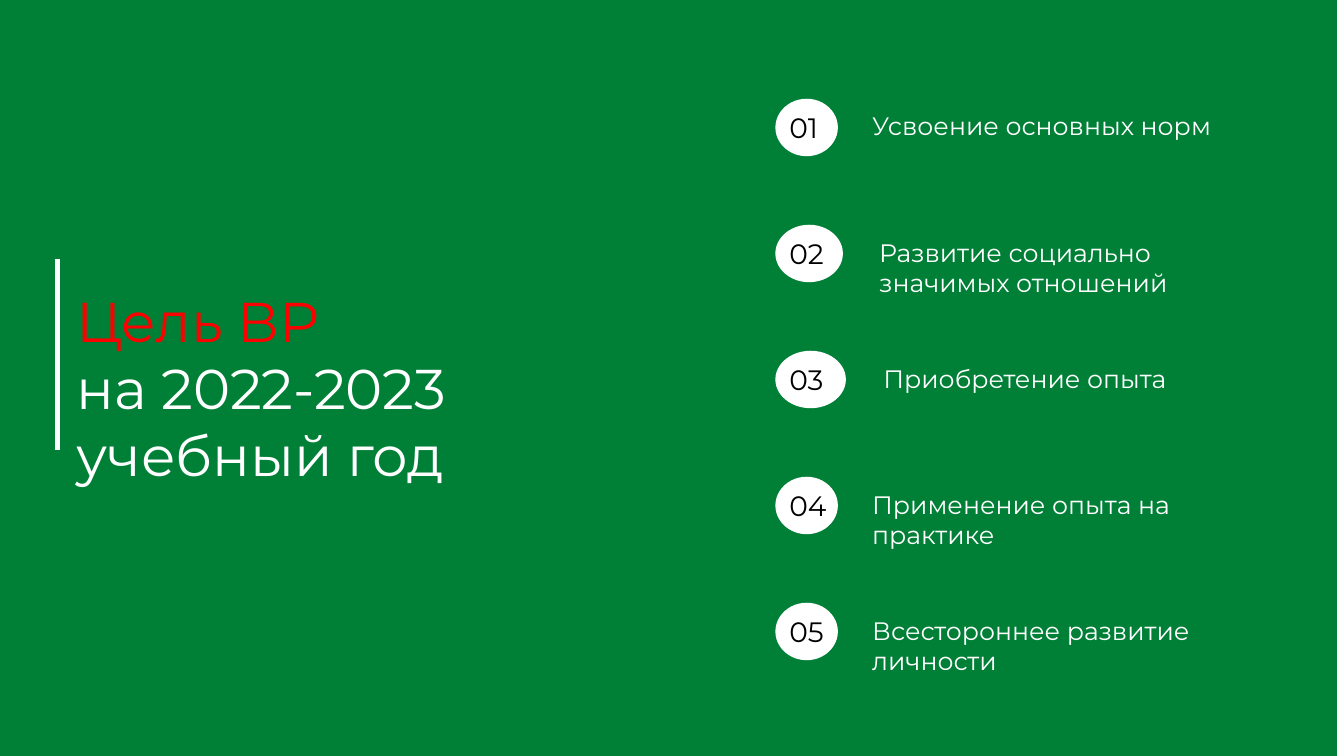
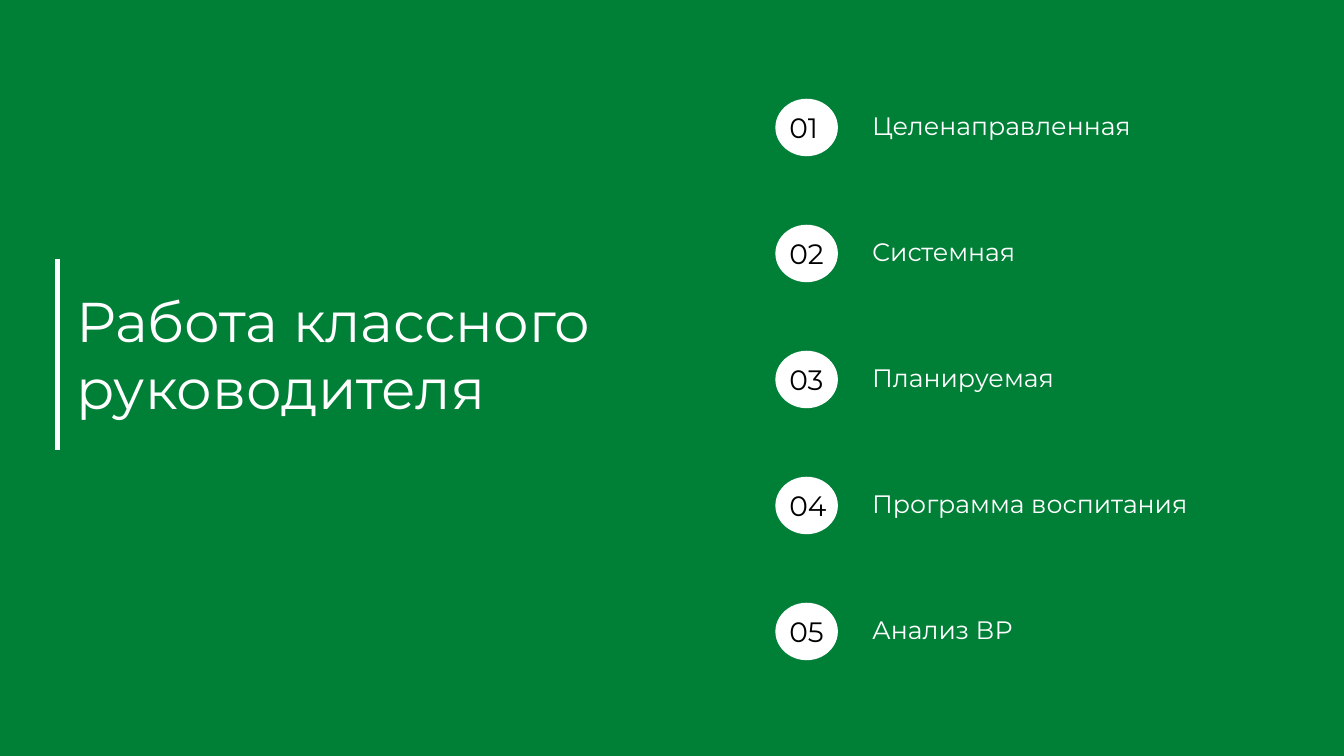
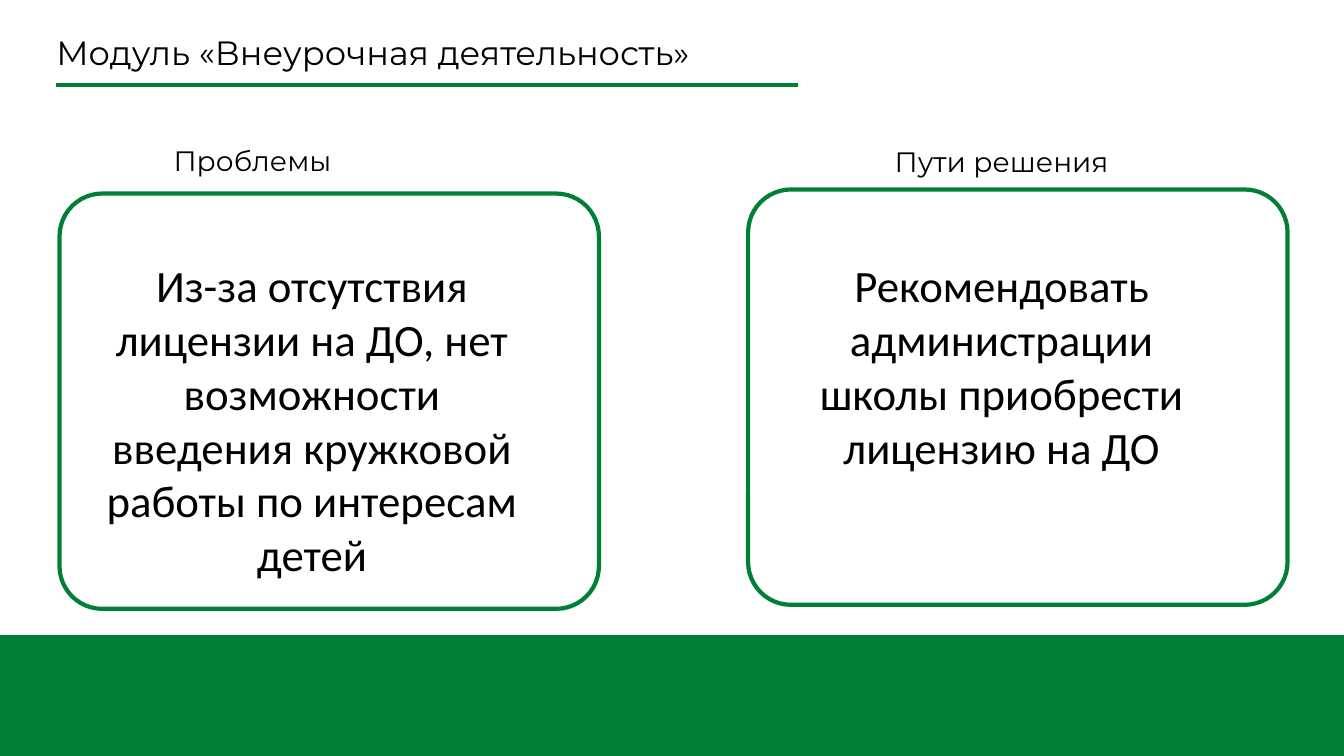
from pptx import Presentation
from pptx.dml.color import RGBColor
from pptx.enum.shapes import MSO_CONNECTOR, MSO_SHAPE
from pptx.enum.text import MSO_ANCHOR, MSO_AUTO_SIZE, PP_ALIGN
from pptx.oxml.ns import qn
from pptx.util import Inches, Pt
from lxml.etree import SubElement

GREEN, WHITE, BLACK, RED = "008037", "FFFFFF", "000000", "FF0000"
FONT = "Montserrat"
WIDE, HIGH = 13.33, 7.5
LEFT, TOP, STEP, DOT = 7.69, 0.98, 1.25, 0.62


def paint(form, tint):
    form.rgb = RGBColor.from_string(tint)


def add_form(slide, kind, box, fill=None, line=None):
    form = slide.shapes.add_shape(kind, *map(Inches, box))
    form.shadow.inherit = False
    if fill:
        form.fill.solid()
        paint(form.fill.fore_color, fill)
    else:
        form.fill.background()
    if line:
        paint(form.line.color, line)
        form.line.width = Pt(3)
    else:
        form.line.fill.background()
    return form


def add_line(slide, start, end, tint):
    line = slide.shapes.add_connector(
        MSO_CONNECTOR.STRAIGHT, *map(Inches, start + end))
    paint(line.line.color, tint)
    line.line.width = Pt(3)
    SubElement(line._element.spPr, qn("a:effectLst"))


def add_text(slide, box, parts, size, font=FONT, align=PP_ALIGN.LEFT):
    frame = slide.shapes.add_textbox(*map(Inches, box)).text_frame
    frame.word_wrap = True
    frame.auto_size = MSO_AUTO_SIZE.SHAPE_TO_FIT_TEXT
    for place, (text, tint) in enumerate(parts):
        para = frame.add_paragraph() if place else frame.paragraphs[0]
        para.alignment = align
        run = para.add_run()
        run.text = text
        run.font.size = Pt(size)
        run.font.name = font
        paint(run.font.color, tint)
    return frame


def add_item(slide, place, text, wide, high, dot=DOT):
    top = TOP + STEP * place
    add_form(slide, MSO_SHAPE.OVAL, (LEFT, top, dot, 0.57), WHITE)
    add_text(slide, (LEFT + 0.04, top + 0.07, dot * 1.32, 0.44),
             [(f"{place + 1:02}", BLACK)], 20)
    add_text(slide, (LEFT + dot * 1.39, top + 0.07, wide, high),
             [(text, WHITE)], 18)


def add_list(slide, title, high, items, left=0):
    add_form(slide, MSO_SHAPE.RECTANGLE, (left, 0, WIDE, HIGH), GREEN)
    add_text(slide, (0.66, 2.79, 5.76, high), title, 40)
    add_line(slide, (0.57, 4.46), (0.57, 2.57), WHITE)
    for place, item in enumerate(items):
        add_item(slide, place, *item)


def add_card(slide, box, head, head_at, text, text_at, high):
    card = add_form(slide, MSO_SHAPE.ROUNDED_RECTANGLE, box, line=GREEN)
    card.adjustments[0] = 0.103
    frame = add_text(slide, head_at + (2.23, 0.3), [(head, BLACK)], 20,
                     align=PP_ALIGN.CENTER)
    frame.vertical_anchor = MSO_ANCHOR.MIDDLE
    frame.margin_left = frame.margin_right = 0
    frame.margin_top = frame.margin_bottom = 0
    frame.paragraphs[0].line_spacing = 0.9
    add_text(slide, text_at + (4.49, high), [(text, BLACK)], 32,
             "Calibri", PP_ALIGN.CENTER)


def add_module(slide):
    add_form(slide, MSO_SHAPE.RECTANGLE, (0, 6.3, WIDE, 1.2), GREEN)
    add_text(slide, (0.46, 0.27, 7.65, 0.5),
             [("Модуль «Внеурочная деятельность»", BLACK)], 24)
    add_line(slide, (0.56, 0.84), (7.91, 0.84), GREEN)
    add_card(slide, (0.59, 1.92, 5.35, 4.12), "Проблемы", (1.39, 1.46),
             "Из-за отсутствия лицензии на ДО, нет возможности введения "
             "кружковой работы по интересам детей", (0.85, 2.51), 3.33)
    add_card(slide, (7.42, 1.88, 5.35, 4.12), "Пути решения", (8.82, 1.47),
             "Рекомендовать администрации школы приобрести лицензию на ДО",
             (7.69, 2.51), 2.26)


def main():
    deck = Presentation()
    deck.slide_width, deck.slide_height = Inches(WIDE), Inches(HIGH)
    goal, work, module = [
        deck.slides.add_slide(deck.slide_layouts[6]) for _ in range(3)]
    add_list(goal, [("Цель ВР", RED), ("на 2022-2023 учебный год", WHITE)],
             2.12, [
                 ("Усвоение основных норм", 3.79, 0.4),
                 ("Развитие социально значимых отношений", 3.24, 1.01, 0.67),
                 ("Приобретение опыта", 3.37, 0.71, 0.7),
                 ("Применение опыта на практике", 3.52, 0.71),
                 ("Всестороннее развитие личности", 3.52, 0.71),
             ], left=-0.07)
    add_list(work, [("Работа классного руководителя", WHITE)], 1.45, [
        ("Целенаправленная", 3, 0.4),
        ("Системная", 3, 0.4),
        ("Планируемая", 3, 0.4),
        ("Программа воспитания", 3.52, 0.4),
        ("Анализ ВР", 3.52, 0.4),
    ])
    add_module(module)
    deck.save("out.pptx")


if __name__ == "__main__":
    main()
